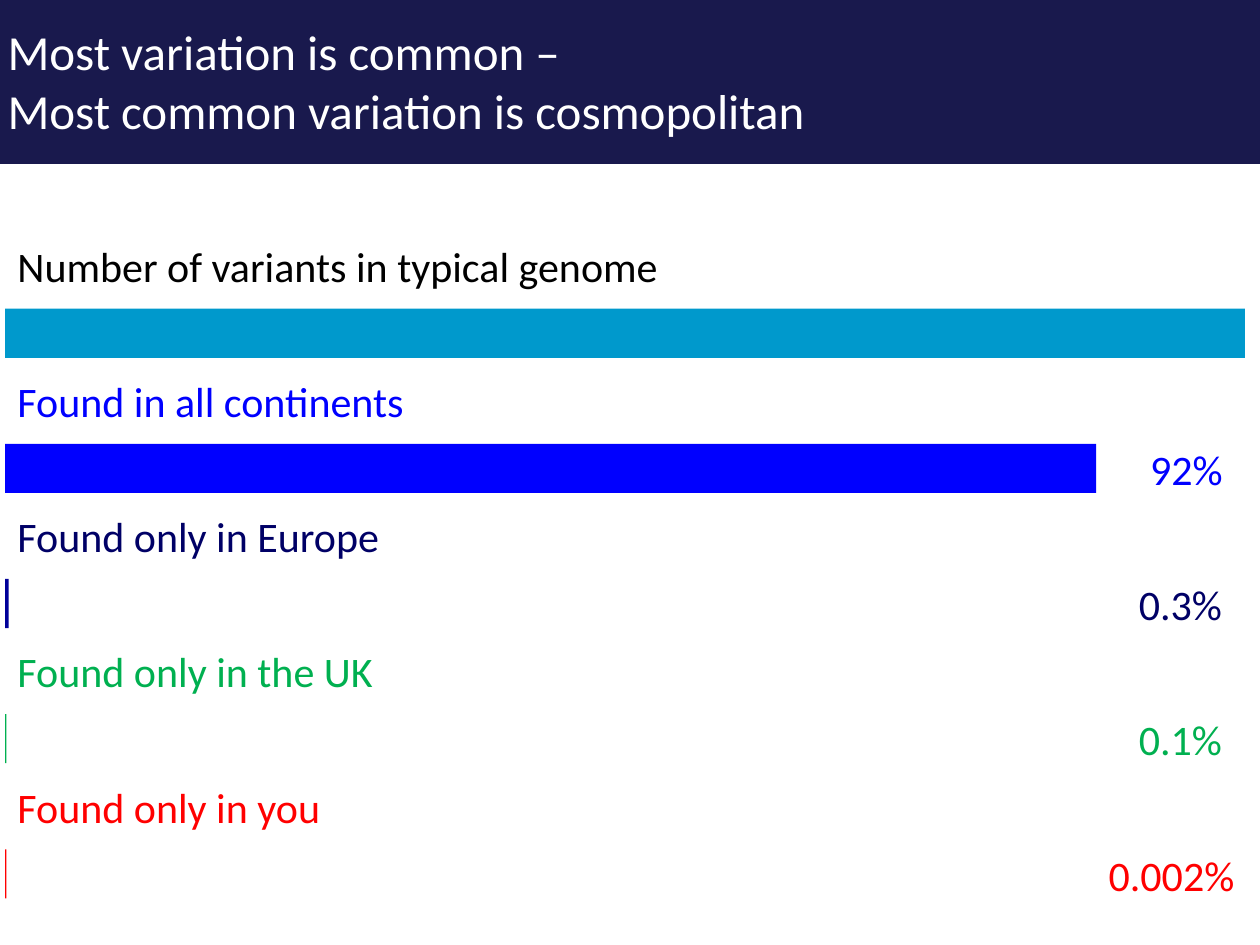
from collections import namedtuple

from pptx import Presentation
from pptx.dml.color import RGBColor
from pptx.enum.shapes import MSO_SHAPE
from pptx.enum.text import MSO_ANCHOR, MSO_AUTO_SIZE, PP_ALIGN
from pptx.util import Inches, Pt

RECTANGLE = MSO_SHAPE.RECTANGLE
MIDDLE = MSO_ANCHOR.MIDDLE
LEFT = PP_ALIGN.LEFT
NO_FIT = MSO_AUTO_SIZE.NONE
GROW = MSO_AUTO_SIZE.SHAPE_TO_FIT_TEXT

BANNER = RGBColor(0x19, 0x19, 0x4D)
WHITE = RGBColor(0xFF, 0xFF, 0xFF)
BLACK = RGBColor(0x00, 0x00, 0x00)
TEAL = RGBColor(0x00, 0x99, 0xCC)
BLUE = RGBColor(0x00, 0x00, 0xFF)
NAVY = RGBColor(0x00, 0x00, 0x99)
DARK_NAVY = RGBColor(0x00, 0x00, 0x66)
GREEN = RGBColor(0x00, 0xB0, 0x50)
RED = RGBColor(0xFF, 0x00, 0x00)

FONT = "Calibri"
ROWS_LEFT = 0.04
ROWS_TOP = 1.86
ROW_PITCH = 1.0725
BAR_DROP = 0.59
BAR_HEIGHT = 0.39
VALUE_DROP = 0.54
TEXT_HEIGHT = 0.5

Row = namedtuple(
    "Row", "label label_width text_color bar_width bar_color value value_left value_width",
    defaults=(None, 0, 0))

ROWS = [
    Row("Number of variants in typical genome", 5.33, BLACK, 9.84, TEAL),
    Row("Found in all continents", 3.3, BLUE, 8.66, BLUE, "92%", 9.03, 0.78),
    Row("Found only in Europe", 3.1, DARK_NAVY, 0.03, NAVY, "0.3%", 8.94, 0.87),
    Row("Found only in the UK", 3.05, GREEN, 0.01, GREEN, "0.1%", 8.94, 0.87),
    Row("Found only in you", 2.63, RED, 0.01, RED, "0.002%", 8.7, 1.21),
]


def style_text(frame, size, color):
    """Apply the slide font, a size and a colour to every run."""
    for paragraph in frame.paragraphs:
        paragraph.alignment = LEFT
        for run in paragraph.runs:
            run.font.name = FONT
            run.font.size = Pt(size)
            run.font.color.rgb = color


def add_title(slide, left, top, width, height):
    """Turn the title placeholder into the dark banner."""
    title = slide.shapes.title
    title.left, title.top = Inches(left), Inches(top)
    title.width, title.height = Inches(width), Inches(height)
    title.fill.solid()
    title.fill.fore_color.rgb = BANNER
    frame = title.text_frame
    frame.text = "Most variation is common – \vMost common variation is cosmopolitan"
    frame.auto_size = NO_FIT
    frame.vertical_anchor = MIDDLE
    style_text(frame, 28, WHITE)


def add_text(shapes, text, left, top, width, color):
    """Add one unwrapped line of row text."""
    box = shapes.add_textbox(Inches(left), Inches(top), Inches(width), Inches(TEXT_HEIGHT))
    frame = box.text_frame
    frame.text = text
    frame.word_wrap = False
    frame.auto_size = GROW
    style_text(frame, 24, color)


def add_row(slide, row, left, top):
    """Group a row's bar, its label and its share, if it has one."""
    shapes = slide.shapes.add_group_shape().shapes
    bar = shapes.add_shape(RECTANGLE, Inches(left), Inches(top + BAR_DROP),
                           Inches(row.bar_width), Inches(BAR_HEIGHT))
    bar.shadow.inherit = False
    bar.fill.solid()
    bar.fill.fore_color.rgb = row.bar_color
    bar.line.fill.background()
    add_text(shapes, row.label, left, top, row.label_width, row.text_color)
    if row.value:
        add_text(shapes, row.value, row.value_left, top + VALUE_DROP,
                 row.value_width, row.text_color)


def main():
    """Build the slide and save it."""
    presentation = Presentation()
    presentation.slide_width = Inches(10)
    presentation.slide_height = Inches(7.5)
    slide = presentation.slides.add_slide(presentation.slide_layouts[5])
    add_title(slide, -0.04, -0.02, 10.04, 1.32)
    for index, row in enumerate(ROWS):
        add_row(slide, row, ROWS_LEFT, ROWS_TOP + index * ROW_PITCH)
    presentation.save("out.pptx")


if __name__ == "__main__":
    main()
